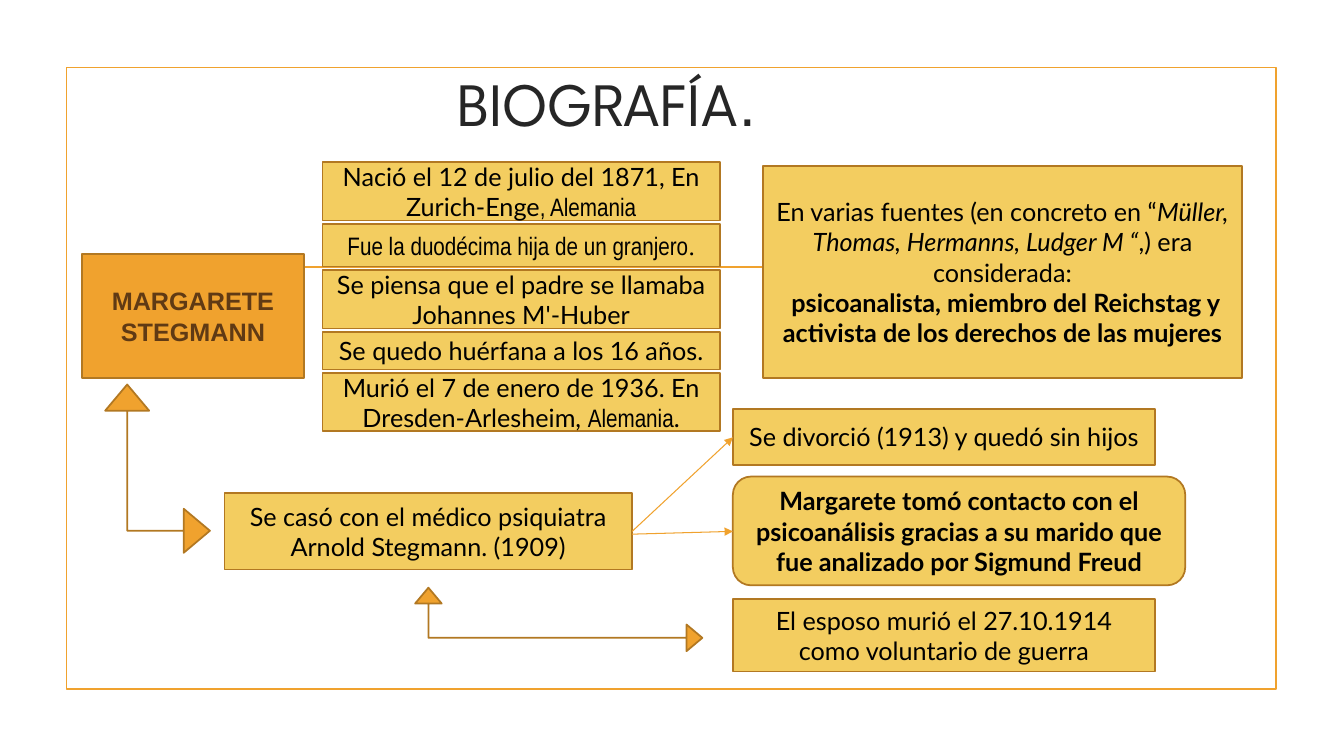
"""Build the biography slide of Margarete Stegmann."""
from dataclasses import dataclass

from lxml import etree
from pptx import Presentation
from pptx.dml.color import RGBColor
from pptx.enum.shapes import MSO_CONNECTOR, MSO_SHAPE
from pptx.enum.text import MSO_ANCHOR, PP_ALIGN
from pptx.oxml.ns import qn
from pptx.shapes.autoshape import Shape
from pptx.shapes.shapetree import SlideShapes
from pptx.text.text import TextFrame
from pptx.util import Cm, Pt

RECTANGLE = MSO_SHAPE.RECTANGLE
ROUNDED = MSO_SHAPE.ROUNDED_RECTANGLE
LEFT_UP_ARROW = MSO_SHAPE.LEFT_UP_ARROW
STRAIGHT = MSO_CONNECTOR.STRAIGHT
MIDDLE = MSO_ANCHOR.MIDDLE
CENTER = PP_ALIGN.CENTER


@dataclass(frozen=True)
class Theme:
    orange: str = "F0A22E"
    yellow: str = "F3CD60"
    border: str = "B27822"
    brown: str = "603A14"
    title_ink: str = "262626"
    ink: str = "000000"
    body: str = "Lato"
    narrow: str = "Arial Narrow"
    sans: str = "Arial"
    serif: str = "Times New Roman"
    display: str = "League Spartan"
    title_size: float = 44
    body_size: float = 18
    outline: float = 1.25
    thin: float = 0.75


THEME = Theme()


@dataclass(frozen=True)
class Area:
    left: float
    top: float
    width: float
    height: float

    def lengths(self) -> tuple[Cm, Cm, Cm, Cm]:
        return Cm(self.left), Cm(self.top), Cm(self.width), Cm(self.height)


@dataclass(frozen=True)
class Piece:
    text: str
    font: str | None = None
    italic: bool | None = None


@dataclass(frozen=True)
class Sentence:
    pieces: tuple[Piece, ...]
    bold: bool = False
    font: str = THEME.body
    size: float = THEME.body_size
    color: str = THEME.ink


@dataclass(frozen=True)
class Fact:
    area: Area
    sentences: tuple[Sentence, ...]
    fill: str = THEME.yellow
    outline: MSO_SHAPE = RECTANGLE


@dataclass(frozen=True)
class Link:
    start: tuple[float, float]
    end: tuple[float, float]
    width: float = THEME.thin
    arrow: bool = True


def plain(text: str, bold: bool = False) -> tuple[Sentence, ...]:
    return (Sentence((Piece(text),), bold),)


def mixed(*pieces: Piece) -> tuple[Sentence, ...]:
    return (Sentence(pieces),)


LIFE_LEFT, LIFE_TOP, LIFE_WIDTH, LIFE_GAP = 8.13, 4.09, 10.01, 0.09
LIFE = (
    (1.47, mixed(Piece("Nació el 12 de julio del 1871, En Zurich-Enge"),
                 Piece(", Alemania", THEME.narrow))),
    (1.07, mixed(Piece("Fue la duodécima hija de un granjero", THEME.narrow),
                 Piece(".", THEME.serif))),
    (1.47, plain("Se piensa que el padre se llamaba Johannes M'-Huber")),
    (0.94, plain("Se quedo huérfana a los 16 años.")),
    (1.47, mixed(Piece("Murió el 7 de enero de 1936. En Dresden-Arlesheim, "),
                 Piece("Alemania", THEME.narrow), Piece("."))),
)
MARRIAGE_LEFT = 18.47
FACTS = (
    Fact(Area(2.06, 6.4, 5.61, 3.12),
         (Sentence((Piece("MARGARETE STEGMANN"),), True, THEME.sans,
                   color=THEME.brown),), THEME.orange),
    Fact(Area(5.66, 12.42, 10.26, 1.93),
         plain("Se casó con el médico psiquiatra Arnold Stegmann. (1909)")),
    Fact(Area(MARRIAGE_LEFT, 10.31, 10.64, 1.4),
         plain("Se divorció (1913) y quedó sin hijos")),
    Fact(Area(MARRIAGE_LEFT, 12.01, 11.4, 2.74),
         plain("Margarete tomó contacto con el psicoanálisis gracias a su "
               "marido que fue analizado por Sigmund Freud", True),
         outline=ROUNDED),
    Fact(Area(MARRIAGE_LEFT, 15.09, 10.64, 1.83),
         plain("El esposo murió el 27.10.1914 como voluntario de guerra")),
    Fact(Area(19.23, 4.19, 12.07, 5.33),
         mixed(Piece("En varias fuentes (en concreto en “"),
               Piece("Müller, Thomas, Hermanns, Ludger M “", italic=True),
               Piece(",) era considerada:"))
         + plain(" psicoanalista, miembro del Reichstag y activista de los "
                 "derechos de las mujeres", True)),
)
TITLE_AREA = Area(3.86, 0.99, 22.86, 3.18)
TITLE = Sentence((Piece("BIOGRAFÍA"), Piece(".", THEME.sans)),
                 font=THEME.display, size=THEME.title_size,
                 color=THEME.title_ink)
FRAME = Area(1.68, 1.7, 30.48, 15.67)
RULE = Link((3.89, 6.73), (30, 6.73), THEME.outline, False)
LINKS = (Link((15.93, 13.39), (MARRIAGE_LEFT, 11.02)),
         Link((15.93, 13.46), (MARRIAGE_LEFT, 13.39)))
CORNER_ARROWS = (Area(1.85, 10.49, 4.24, 2.64), Area(13.28, 11.99, 1.6, 7.24))


def write(frame: TextFrame, sentences: tuple[Sentence, ...]) -> None:
    frame.word_wrap = True
    frame.vertical_anchor = MIDDLE
    for index, sentence in enumerate(sentences):
        paragraph = frame.add_paragraph() if index else frame.paragraphs[0]
        paragraph.alignment = CENTER
        paragraph.font.name = sentence.font
        paragraph.font.size = Pt(sentence.size)
        paragraph.font.bold = sentence.bold
        paragraph.font.color.rgb = RGBColor.from_string(sentence.color)
        for piece in sentence.pieces:
            run = paragraph.add_run()
            run.text = piece.text
            if piece.font:
                run.font.name = piece.font
            if piece.italic:
                run.font.italic = True


def draw_shape(shapes: SlideShapes, kind: MSO_SHAPE, area: Area,
               fill: str | None, line: str) -> Shape:
    shape = shapes.add_shape(kind, *area.lengths())
    shape.shadow.inherit = False
    if fill:
        shape.fill.solid()
        shape.fill.fore_color.rgb = RGBColor.from_string(fill)
    else:
        shape.fill.background()
    shape.line.color.rgb = RGBColor.from_string(line)
    shape.line.width = Pt(THEME.outline)
    return shape


def draw_fact(shapes: SlideShapes, fact: Fact) -> None:
    box = draw_shape(shapes, fact.outline, fact.area, fact.fill, THEME.border)
    write(box.text_frame, fact.sentences)


def draw_link(shapes: SlideShapes, link: Link) -> None:
    connector = shapes.add_connector(
        STRAIGHT, *(Cm(value) for value in link.start + link.end))
    connector.line.color.rgb = RGBColor.from_string(THEME.orange)
    connector.line.width = Pt(link.width)
    properties = connector.line._get_or_add_ln().getparent()
    etree.SubElement(properties, qn("a:effectLst"))
    if link.arrow:
        etree.SubElement(properties.find(qn("a:ln")), qn("a:tailEnd"),
                         type="triangle")


def draw_corner_arrow(shapes: SlideShapes, area: Area) -> None:
    arrow = draw_shape(shapes, LEFT_UP_ARROW, area, THEME.orange, THEME.border)
    arrow.rotation = 90
    for index, value in enumerate((0, 0.21, 0.25)):
        arrow.adjustments[index] = value


def main() -> None:
    deck = Presentation()
    deck.slide_width, deck.slide_height = Cm(33.87), Cm(19.05)
    shapes = deck.slides.add_slide(deck.slide_layouts[6]).shapes
    draw_shape(shapes, RECTANGLE, FRAME, None, THEME.orange)
    draw_link(shapes, RULE)
    write(shapes.add_textbox(*TITLE_AREA.lengths()).text_frame, (TITLE,))
    top = LIFE_TOP
    for height, sentences in LIFE:
        draw_fact(shapes, Fact(Area(LIFE_LEFT, top, LIFE_WIDTH, height), sentences))
        top += height + LIFE_GAP
    for fact in FACTS:
        draw_fact(shapes, fact)
    for area in CORNER_ARROWS:
        draw_corner_arrow(shapes, area)
    for link in LINKS:
        draw_link(shapes, link)
    deck.save("out.pptx")


if __name__ == "__main__":
    main()
